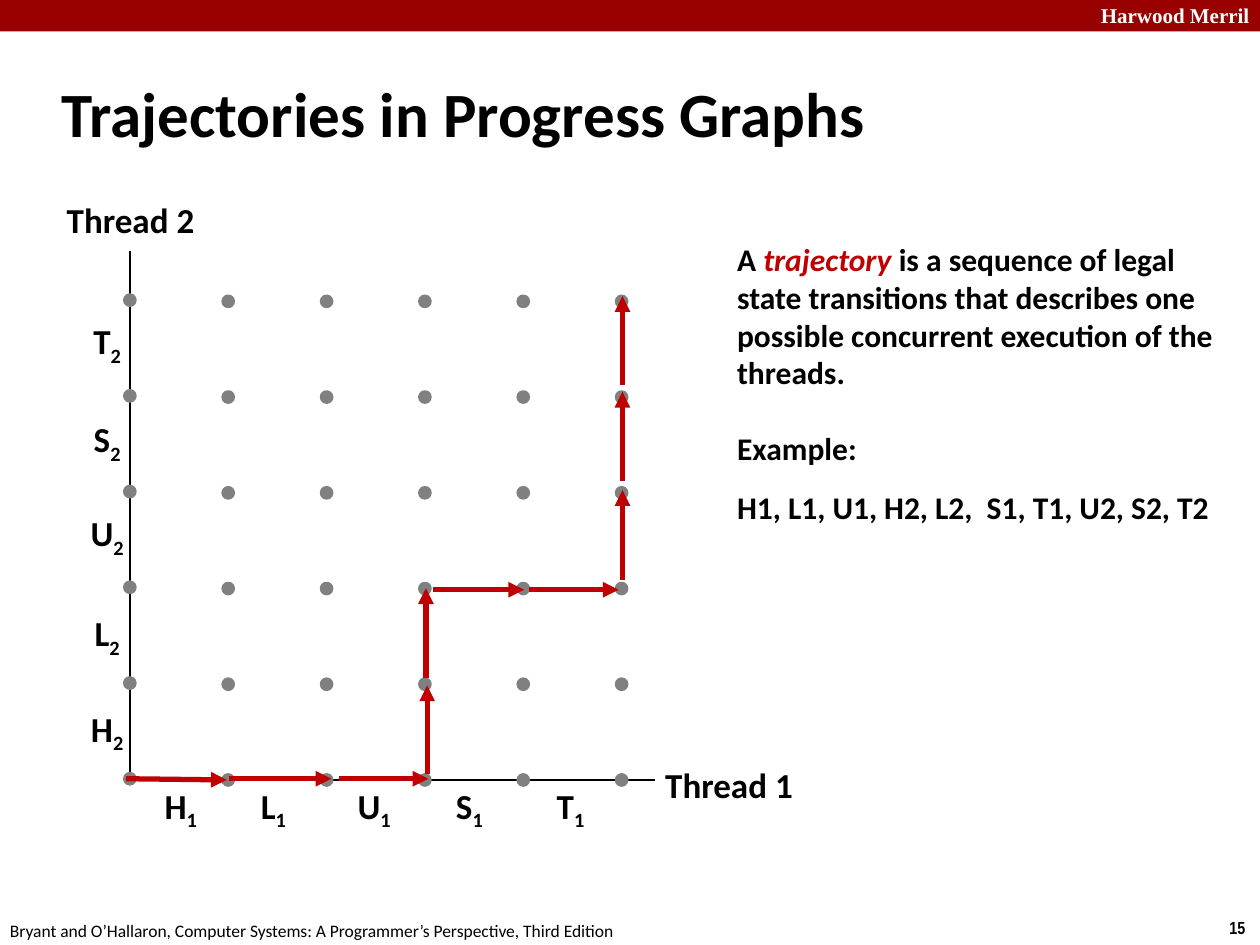
from dataclasses import dataclass

import lxml.etree
import pptx
import pptx.dml.color
import pptx.enum.shapes
import pptx.enum.text
import pptx.oxml.ns
import pptx.util

Pt = pptx.util.Pt
Align = pptx.enum.text.PP_ALIGN
Anchor = pptx.enum.text.MSO_ANCHOR
BLACK, WHITE, GRAY = "000000", "FFFFFF", "808080"
BANNER_RED, PATH_RED = "990000", "C00000"
ORIGIN_X, ORIGIN_Y = 74.2, 445.7
STEP_X, STEP_Y = 56.2, 54.7
GRID_SIZE = 6
DOT_SIZE = 5.8
AXIS_SHIFT = 0.7
OPERATION_WIDTH, THREAD_WIDTH = 38, 90


@dataclass
class Label:
    """A line of text in its box, with an optional subscript."""
    text: str
    left: float
    top: float
    width: float
    height: float
    size: float
    font: str = "Calibri"
    bold: bool = True
    color: str = BLACK
    subscript: str = ""
    alignment: Align = Align.LEFT
    anchor: Anchor = Anchor.TOP


@dataclass
class Segment:
    """A straight line between two points."""
    x1: float
    y1: float
    x2: float
    y2: float


@dataclass
class Operation:
    """A thread operation with its label centre along each axis."""
    letter: str
    center_x: float
    center_y: float


OPERATIONS = [
    Operation("H", 103.3, 417.8),
    Operation("L", 156.2, 363.1),
    Operation("U", 213.8, 306.2),
    Operation("S", 268.2, 252.2),
    Operation("T", 326, 196.1),
]

AXES = [
    Segment(ORIGIN_X, ORIGIN_Y, 374.4, ORIGIN_Y),
    Segment(ORIGIN_X, ORIGIN_Y, ORIGIN_X, 143.3),
]

TRAJECTORY = [
    Segment(72, 445, 129.6, 445.7),
    Segment(131, 445, 189.4, 445),
    Segment(193.7, 445, 244.8, 445),
    Segment(244.1, 442.1, 244.1, 391.7),
    Segment(243.4, 387.4, 243.4, 336.2),
    Segment(247.7, 337, 299.5, 337),
    Segment(302.4, 337, 353.5, 337),
    Segment(355.7, 331.2, 355.7, 280.1),
    Segment(355.7, 275, 355.7, 223.9),
    Segment(355.7, 220.3, 355.7, 169.2),
]


def rgb(color: str) -> pptx.dml.color.RGBColor:
    """Turn a hex string into a colour."""
    return pptx.dml.color.RGBColor.from_string(color)


def style_font(font, size: float, name: str = "Calibri", bold: bool = True, color: str = BLACK) -> None:
    """Set the face, size, weight and colour of a font."""
    font.name, font.size, font.bold = name, Pt(size), bold
    font.color.rgb = rgb(color)


def place(shape, left: float, top: float, width: float, height: float) -> None:
    """Move and size a shape."""
    shape.left, shape.top = Pt(left), Pt(top)
    shape.width, shape.height = Pt(width), Pt(height)


def add_label(slide, label: Label) -> None:
    """Draw a label as a text box."""
    box = slide.shapes.add_textbox(Pt(label.left), Pt(label.top), Pt(label.width), Pt(label.height))
    frame = box.text_frame
    frame.word_wrap = False
    frame.vertical_anchor = label.anchor
    paragraph = frame.paragraphs[0]
    paragraph.alignment = label.alignment
    style_font(paragraph.font, label.size, label.font, label.bold, label.color)
    paragraph.add_run().text = label.text
    if label.subscript:
        run = paragraph.add_run()
        run.text = label.subscript
        run._r.get_or_add_rPr().set("baseline", "-25000")


def add_centered_label(slide, text: str, center_x: float, center_y: float, width: float, subscript: str = "") -> None:
    """Draw a graph label centred on a point."""
    height = 31.7
    add_label(slide, Label(text, center_x - width / 2, center_y - height / 2, width, height, 20,
                           subscript=subscript, alignment=Align.CENTER, anchor=Anchor.MIDDLE))


def add_filled_shape(slide, kind, left: float, top: float, width: float, height: float, color: str):
    """Draw a flat shape without a line."""
    shape = slide.shapes.add_shape(kind, Pt(left), Pt(top), Pt(width), Pt(height))
    shape.shadow.inherit = False
    shape.fill.solid()
    shape.fill.fore_color.rgb = rgb(color)
    shape.line.fill.background()
    return shape


def add_dot(slide, center_x: float, center_y: float) -> None:
    """Draw one state of the progress graph."""
    dot = add_filled_shape(slide, pptx.enum.shapes.MSO_SHAPE.OVAL, center_x - DOT_SIZE / 2,
                           center_y - DOT_SIZE / 2, DOT_SIZE, DOT_SIZE, GRAY)
    dot.line.color.rgb = rgb(GRAY)
    dot.line.width = Pt(2)


def add_line(slide, segment: Segment, color: str, width: float, arrow: bool = False) -> None:
    """Draw a line, with an arrowhead at its end on request."""
    connector = slide.shapes.add_connector(
        pptx.enum.shapes.MSO_CONNECTOR.STRAIGHT,
        Pt(segment.x1), Pt(segment.y1), Pt(segment.x2), Pt(segment.y2))
    connector.line.color.rgb = rgb(color)
    connector.line.width = Pt(width)
    properties = connector._element.spPr
    if arrow:
        line = properties.find(pptx.oxml.ns.qn("a:ln"))
        lxml.etree.SubElement(line, pptx.oxml.ns.qn("a:tailEnd")).set("type", "triangle")
    lxml.etree.SubElement(properties, pptx.oxml.ns.qn("a:effectLst"))


def fill_title(title) -> None:
    """Write the slide title."""
    place(title, 28, 34, 598, 60)
    frame = title.text_frame
    frame.text = "Trajectories in Progress Graphs"
    frame.auto_size = pptx.enum.text.MSO_AUTO_SIZE.NONE
    frame.vertical_anchor = Anchor.MIDDLE
    frame.paragraphs[0].alignment = Align.LEFT
    style_font(frame.paragraphs[0].font, 36)


def fill_body(body) -> None:
    """Write the definition and the example."""
    place(body, 414, 132.8, 300.2, 172)
    frame = body.text_frame
    frame.auto_size = pptx.enum.text.MSO_AUTO_SIZE.NONE
    frame.vertical_anchor = Anchor.MIDDLE
    frame.text = "\n".join(["", "Example:", "H1, L1, U1, H2, L2,  S1, T1, U2, S2, T2"])
    definition = frame.paragraphs[0]
    for text in ("A ", "trajectory", " is a sequence of legal state transitions that describes "
                 "one possible concurrent execution of the threads."):
        definition.add_run().text = text
    for paragraph, space in zip(frame.paragraphs, (0, 21.6, 12)):
        paragraph.space_before = Pt(space)
        style_font(paragraph.font, 18)
        properties = paragraph._p.get_or_add_pPr()
        properties.set("marL", "0")
        properties.set("indent", "0")
        bullet = lxml.etree.Element(pptx.oxml.ns.qn("a:buNone"))
        properties.find(pptx.oxml.ns.qn("a:defRPr")).addprevious(bullet)
    term = definition.runs[1].font
    term.italic = True
    term.color.rgb = rgb(PATH_RED)


def main() -> None:
    """Build and save the slide."""
    presentation = pptx.Presentation()
    presentation.slide_width, presentation.slide_height = Pt(720), Pt(540)
    slide = presentation.slides.add_slide(presentation.slide_layouts[1])
    add_filled_shape(slide, pptx.enum.shapes.MSO_SHAPE.RECTANGLE, 0, 0, 720, 18, BANNER_RED)
    add_label(slide, Label("Harwood Merril", 622, -2.2, 103, 21.6, 12, "Times New Roman", color=WHITE))
    add_label(slide, Label("15", 695.5, 520.6, 24.5, 19.4, 10, "Arial Narrow"))
    add_label(slide, Label("Bryant and O’Hallaron, Computer Systems: A Programmer’s Perspective, Third Edition",
                           -1.4, 522, 365.8, 19.4, 10, bold=False))
    fill_title(slide.shapes.title)
    fill_body(slide.placeholders[1])
    for axis in AXES:
        add_line(slide, axis, BLACK, 1)
    for operation in OPERATIONS:
        add_centered_label(slide, operation.letter, operation.center_x, 461.8, OPERATION_WIDTH, "1")
        add_centered_label(slide, operation.letter, 61.2, operation.center_y, OPERATION_WIDTH, "2")
    add_centered_label(slide, "Thread 1", 416.6, 448.2, THREAD_WIDTH)
    add_centered_label(slide, "Thread 2", 74.6, 125.6, THREAD_WIDTH)
    for column in range(GRID_SIZE):
        shift = 0 if column else AXIS_SHIFT
        for row in range(GRID_SIZE):
            add_dot(slide, ORIGIN_X + column * STEP_X, ORIGIN_Y - row * STEP_Y - shift)
    for segment in TRAJECTORY:
        add_line(slide, segment, PATH_RED, 3, arrow=True)
    presentation.save("out.pptx")


if __name__ == "__main__":
    main()
